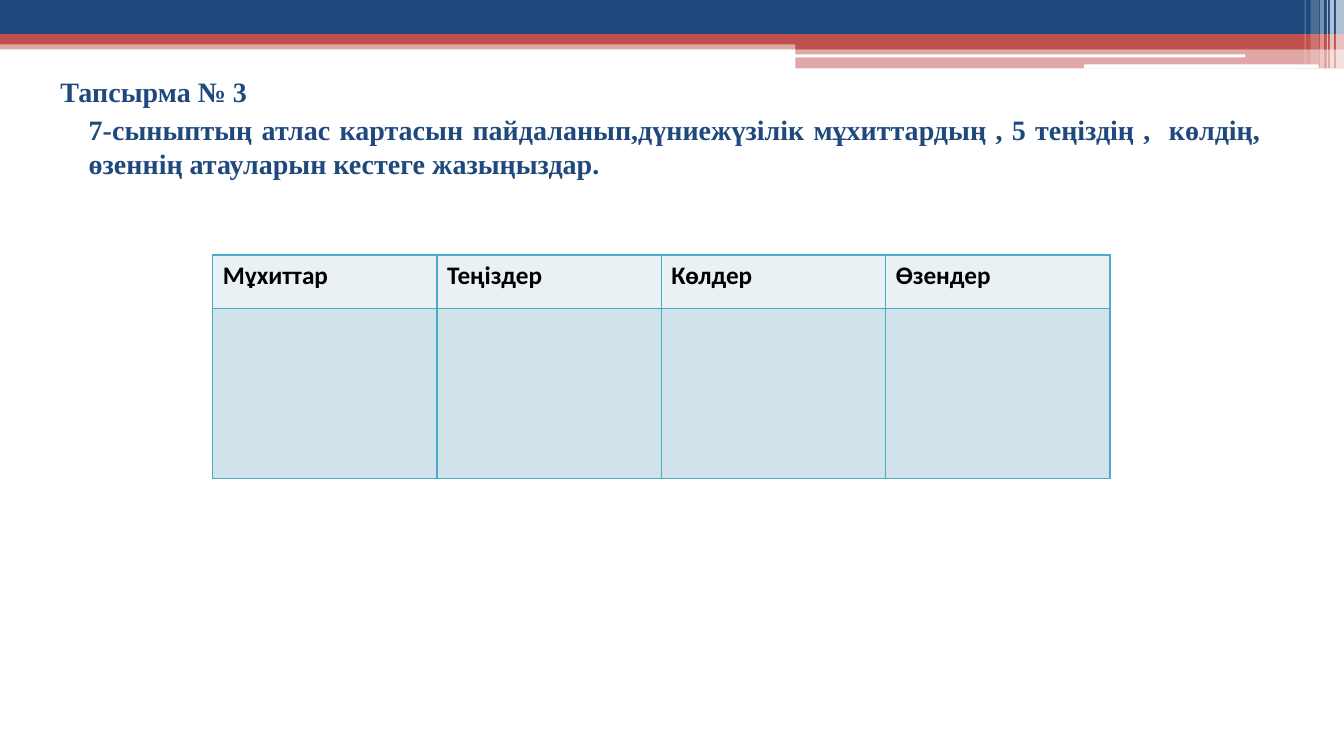
from lxml import etree
from pptx import Presentation
from pptx.dml.color import RGBColor
from pptx.enum import shapes, text
from pptx.oxml import ns
from pptx.util import Inches, Pt

NAVY = RGBColor(0x1F, 0x49, 0x7D)
RED = RGBColor(0xC0, 0x50, 0x4D)
WHITE = RGBColor(0xFF, 0xFF, 0xFF)
BLACK = RGBColor(0, 0, 0)
TEAL = RGBColor(0x4B, 0xAC, 0xC6)
PALE = RGBColor(0xE9, 0xF1, 0xF5)
MIST = RGBColor(0xD0, 0xE3, 0xEA)

TASK = [
    # text, first-line indent
    ("Тапсырма № 3", -0.28),
    ("7-сыныптың атлас картасын пайдаланып,дүниежүзілік мұхиттардың , "
     "5 теңіздің ,  көлдің,  өзеннің атауларын кестеге жазыңыздар.", 0),
]
HEADS = ["Мұхиттар", "Теңіздер", "Көлдер", "Өзендер"]
ROWS = [(0.53, PALE), (1.69, MIST)]

WIDE, HIGH = 13.33, 7.5
HALF = 7.89
BANDS = [
    # left, top, width, height, colour, opacity
    (0, 0.4, WIDE, 0.09, RED, 50),
    (0, 0, WIDE, 0.34, NAVY, 100),
    (0, 0.34, WIDE, 0.1, RED, 100),
    (HALF, 0.39, WIDE - HALF, 0.1, RED, 100),
    (HALF, 0.48, WIDE - HALF, 0.2, RED, 50),
]
SLOTS = [(7.88, 0.54, 4.47, 0.03), (10.75, 0.64, 2.33, 0.04)]
STRIPES = [
    # left, width, height, opacity
    (13.25, 0.08, 0.68, 65), (13.19, 0.04, 0.68, 65),
    (13.16, 0.01, 0.68, 60), (13.09, 0.04, 0.68, 40),
    (13, 0.08, 0.64, 20), (12.94, 0.01, 0.64, 30),
]

prs = Presentation()
prs.slide_width, prs.slide_height = Inches(WIDE), Inches(HIGH)
slide = prs.slides.add_slide(prs.slide_layouts[1])


def add_bar(left, top, width, height, colour, alpha=100,
            kind=shapes.MSO_SHAPE.RECTANGLE):
    bar = slide.shapes.add_shape(
        kind, *map(Inches, (left, top, width, height)))
    bar.shadow.inherit = False
    bar.line.fill.background()
    bar.fill.solid()
    bar.fill.fore_color.rgb = colour
    if alpha < 100:
        tint = bar.fill._xPr.find(".//" + ns.qn("a:srgbClr"))
        etree.SubElement(tint, ns.qn("a:alpha"), val=str(alpha * 1000))


def add_border(cell):
    props = cell._tc.get_or_add_tcPr()
    for spot, side in enumerate(("lnL", "lnR", "lnT", "lnB")):
        line = etree.Element(ns.qn("a:" + side), w=str(Pt(1)))
        fill = etree.SubElement(line, ns.qn("a:solidFill"))
        etree.SubElement(fill, ns.qn("a:srgbClr"), val=str(TEAL))
        props.insert(spot, line)


def style(font, name, size, colour):
    font.name, font.size, font.bold = name, Pt(size), True
    font.color.rgb = colour


for band in BANDS:
    add_bar(*band)
for slot in SLOTS:
    add_bar(*slot, WHITE, kind=shapes.MSO_SHAPE.ROUNDED_RECTANGLE)
for left, width, height, alpha in STRIPES:
    add_bar(left, 0, width, height, WHITE, alpha)

title = slide.shapes.title._element
title.getparent().remove(title)
body = slide.placeholders[1]
slide.shapes._spTree.append(body._element)
body.left, body.top, body.width, body.height = map(
    Inches, (0.38, 0.65, 12.32, 1.29))
frame = body.text_frame
frame.auto_size = text.MSO_AUTO_SIZE.NONE
frame.vertical_anchor = text.MSO_ANCHOR.TOP
frame.margin_top = Inches(0.09)
for row, (words, indent) in enumerate(TASK):
    para = frame.add_paragraph() if row else frame.paragraphs[0]
    para.text = words
    para.alignment = text.PP_ALIGN.JUSTIFY
    para.space_before = Pt(3 if row else 0)
    props = para._p.get_or_add_pPr()
    props.set("marL", str(Inches(0.4)))
    props.set("indent", str(Inches(indent)))
    etree.SubElement(props, ns.qn("a:buNone"))
    style(para.font, "Times New Roman", 20, NAVY)

table = slide.shapes.add_table(
    len(ROWS), len(HEADS), Inches(2.11), Inches(2.53),
    Inches(8.9), Inches(sum(high for high, _ in ROWS))).table
table.first_row = table.horz_banding = False
for row, (high, colour) in enumerate(ROWS):
    table.rows[row].height = Inches(high)
    for col, head in enumerate(HEADS):
        cell = table.cell(row, col)
        cell.fill.solid()
        cell.fill.fore_color.rgb = colour
        add_border(cell)
        if row == 0:
            cell.text = head
            style(cell.text_frame.paragraphs[0].font, "Calibri", 18, BLACK)

prs.save("out.pptx")
